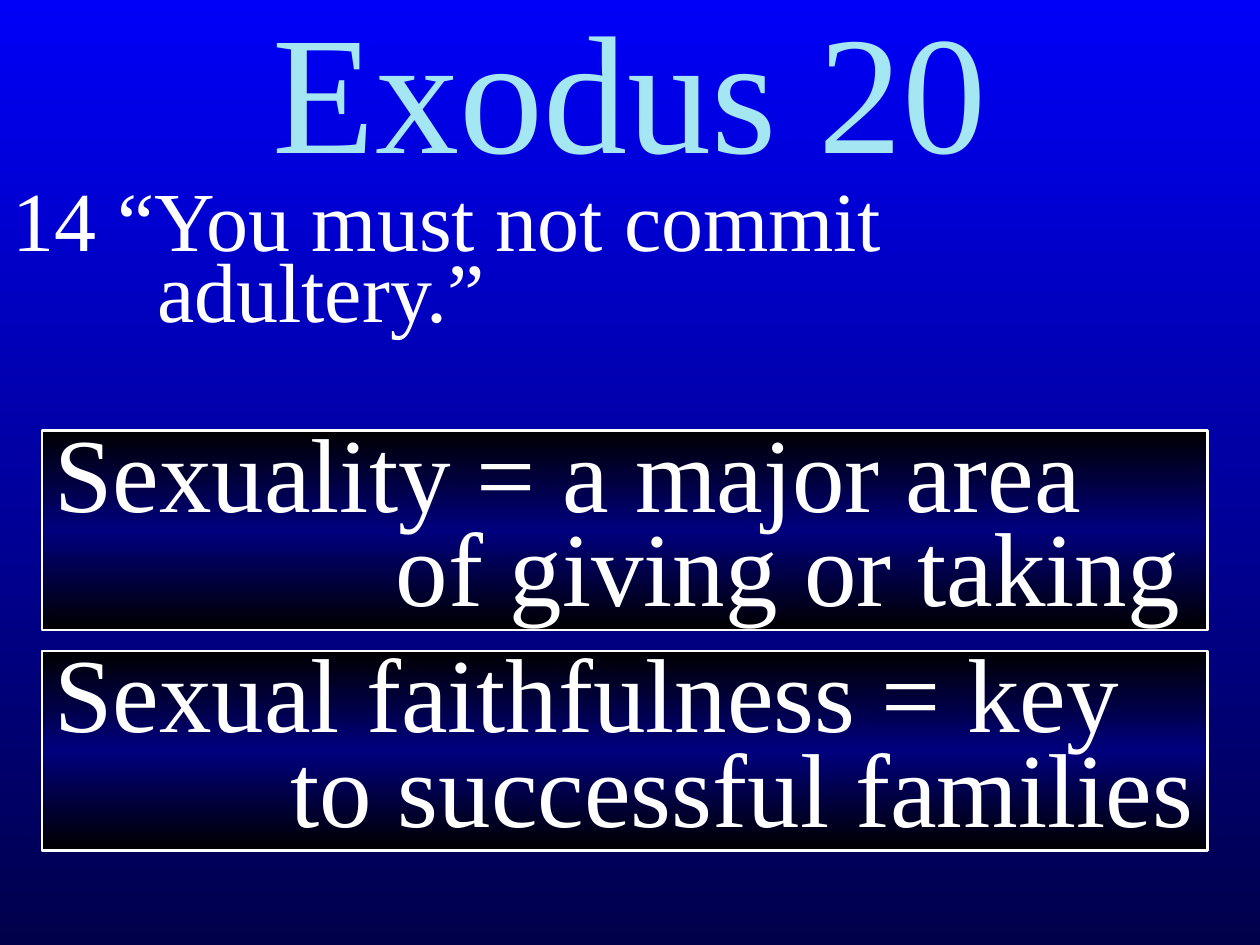
"""Build the Exodus 20 slide with a verse and two boxed statements."""
from copy import deepcopy

from pptx import Presentation
from pptx import util as u
from pptx.dml.color import RGBColor
from pptx.enum import shapes, text


def paint_gradient(fill, element, colours):
    fill.gradient()
    fill.gradient_angle = 270
    stop_list = element.xpath(".//a:gsLst")[0]
    while len(stop_list) < len(colours):
        stop_list.append(deepcopy(stop_list[0]))
    for index, (stop, colour) in enumerate(zip(fill.gradient_stops, colours)):
        stop.position = index / (len(colours) - 1)
        stop.color.rgb = RGBColor.from_string(colour)


def write_lines(shape, lines, size, colour, spacing, before=0, hanging=0):
    frame = shape.text_frame
    frame.word_wrap = True
    frame.auto_size = text.MSO_AUTO_SIZE.NONE
    paragraph = frame.paragraphs[0]
    paragraph.alignment = text.PP_ALIGN.LEFT
    paragraph.line_spacing = spacing
    paragraph.space_before = u.Pt(before)
    properties = paragraph._p.get_or_add_pPr()
    properties.set("marL", str(u.Inches(hanging)))
    properties.set("indent", str(u.Inches(-hanging)))
    for index, line in enumerate(lines):
        if index:
            paragraph.add_line_break()
        run = paragraph.add_run()
        run.text = line
        run.font.size = u.Pt(size)
        run.font.name = "Times New Roman"
        run.font.color.rgb = RGBColor.from_string(colour)
    return paragraph


presentation = Presentation()
presentation.slide_width = width = u.Inches(10)
presentation.slide_height = height = u.Inches(7.5)
row = height // 45
slide = presentation.slides.add_slide(presentation.slide_layouts[5])
paint_gradient(slide.background.fill, slide._element, ["0000F8", "00004A"])

title = slide.shapes.title
title.left, title.top, title.width, title.height = 0, 0, width, 10 * row
title.text_frame.vertical_anchor = text.MSO_ANCHOR.MIDDLE
heading = write_lines(title, ["Exodus 20"], 96, "A5E6F3", 0.8)
heading.alignment = text.PP_ALIGN.CENTER

verse = slide.shapes.add_textbox(0, 9 * row, width, 32 * row)
write_lines(verse, ["14\u00a0“You must not commit", "adultery.”"],
            48, "FFFFFF", 0.7, before=5, hanging=1.15)

statements = [
    (["Sexuality = a major area", "of giving or taking"], 2.71),
    (["Sexual faithfulness = key", "to successful families"], 1.87),
]
for index, (lines, hanging) in enumerate(statements):
    box = slide.shapes.add_shape(
        shapes.MSO_SHAPE.RECTANGLE, width // 30,
        int((20.5 + 10.5 * index) * row), int(width * 0.925), int(9.5 * row))
    box.shadow.inherit = False
    paint_gradient(box.fill, box._element, ["000000", "00007E", "000000"])
    box.line.color.rgb = RGBColor.from_string("FFFFFF")
    box.line.width = u.Pt(1.5)
    box.text_frame.vertical_anchor = text.MSO_ANCHOR.TOP
    box.text_frame.margin_right = 0
    write_lines(box, lines, 60, "FFFFFF", 0.75, before=6, hanging=hanging)

presentation.save("out.pptx")
